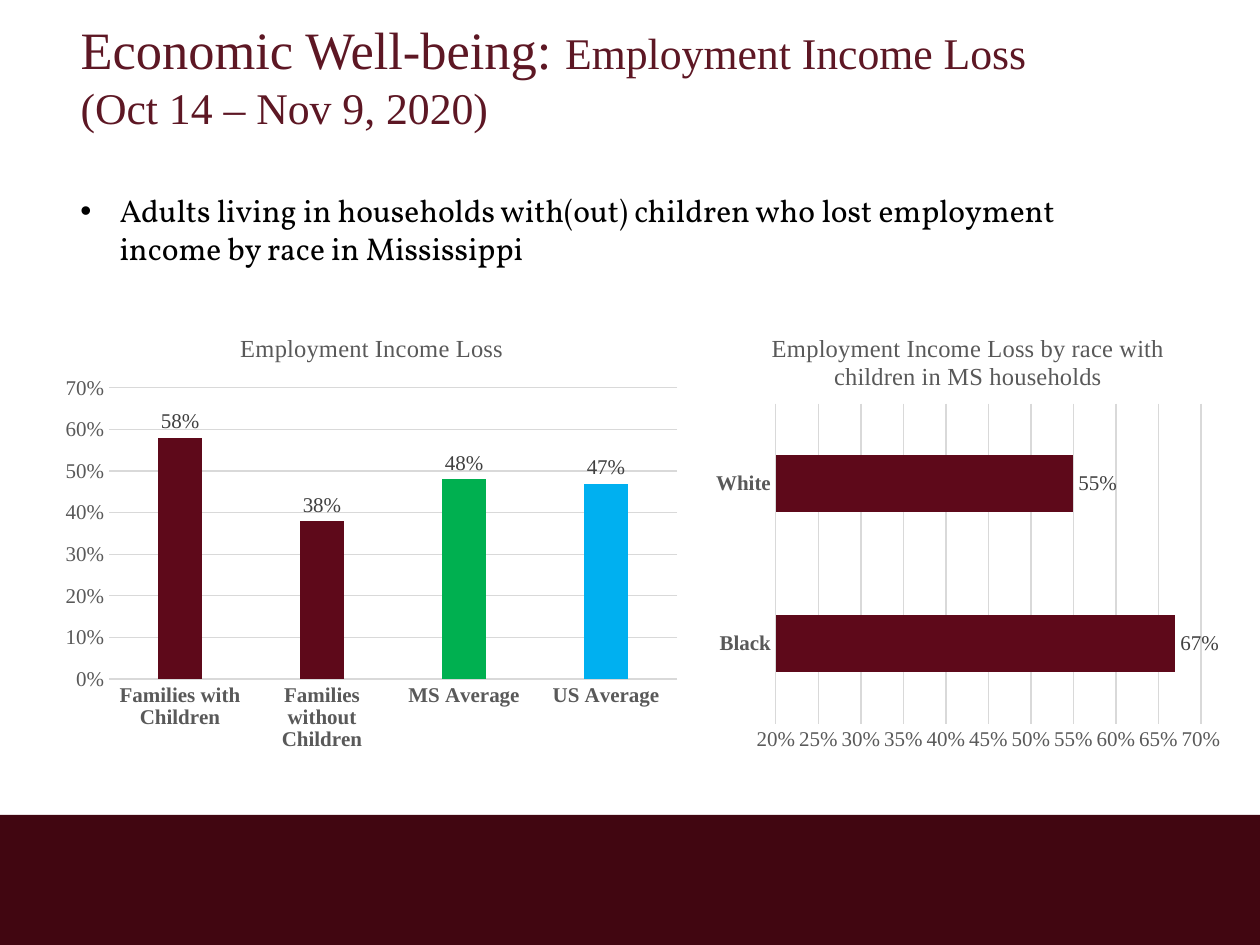
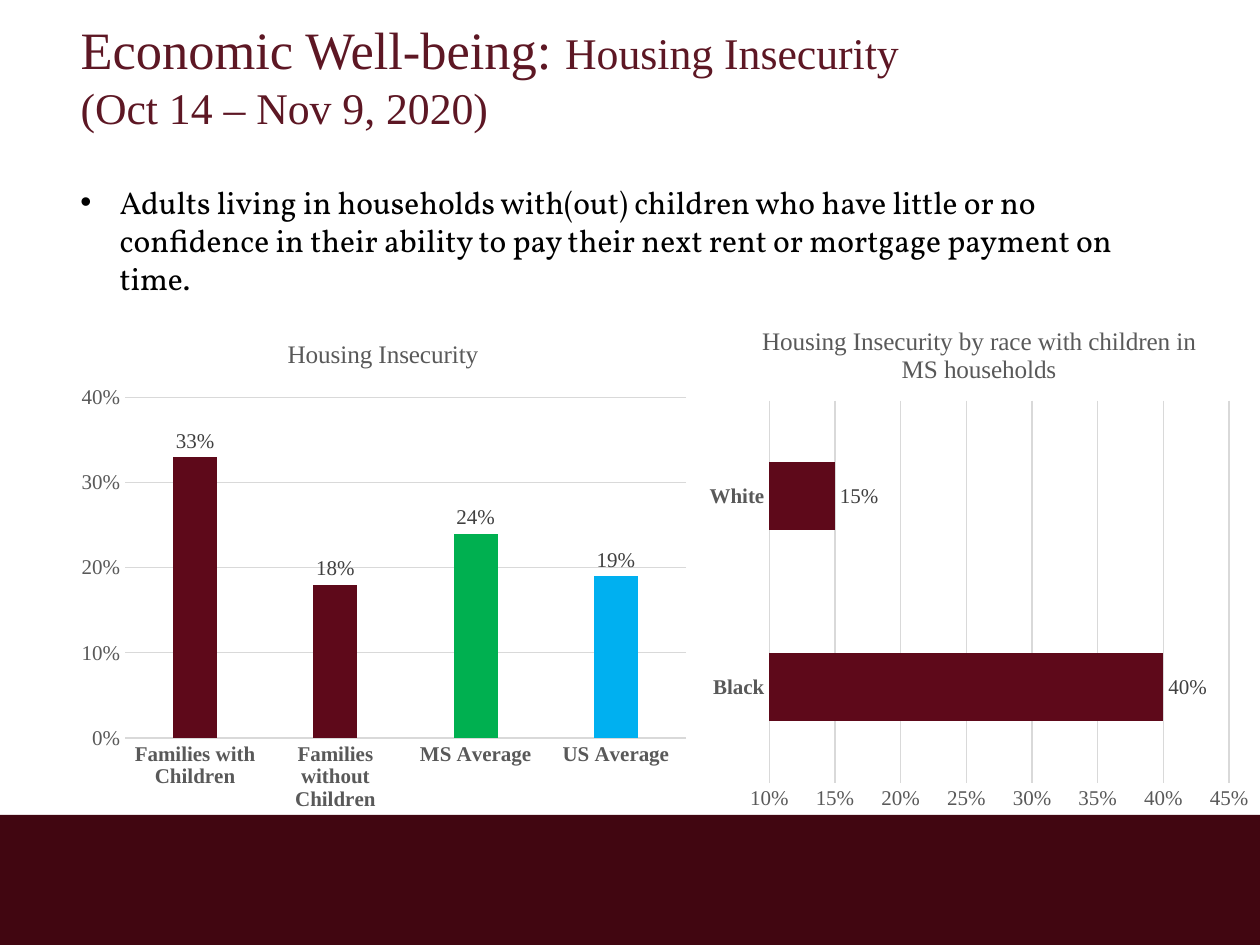
from dataclasses import dataclass, field

from lxml import etree
from pptx import Presentation
from pptx.chart.data import CategoryChartData
from pptx.dml.color import RGBColor
from pptx.enum.chart import XL_CHART_TYPE, XL_LABEL_POSITION, XL_TICK_MARK
from pptx.enum.shapes import MSO_SHAPE
from pptx.enum.text import MSO_ANCHOR, MSO_AUTO_SIZE, PP_ALIGN
from pptx.oxml import parse_xml
from pptx.oxml.ns import nsdecls, qn
from pptx.util import Cm, Pt

HUES = {
    "white": "FFFFFF", "black": "000000", "title": "5D1724", "band": "410611",
    "bar": "5E091A", "state": "00B050", "nation": "00B0F0",
    "axis": "595959", "label": "404040", "grid": "D9D9D9",
}
SERIF, BODY = "Times New Roman", "Vollkorn"
WIDTH, HEIGHT = 25.4, 19.05
BAND_TOP = 16.43
GROUPS = ("Families with Children", "Families without Children",
          "MS Average", "US Average")
RACES = ("Black", "White")


@dataclass
class Box:
    left: float
    top: float
    width: float
    height: float

    def lengths(self) -> tuple:
        return Cm(self.left), Cm(self.top), Cm(self.width), Cm(self.height)


@dataclass
class Graph:
    """A chart; frame and plot are both measured in cm on the slide."""
    title: str
    frame: Box
    plot: Box
    cats: tuple
    vals: tuple
    low: float
    high: float
    step: float
    size: float = 14
    name: str = "Series 1"
    flat: bool = False
    points: dict = field(default_factory=dict)


@dataclass
class Page:
    topic: str
    note: str
    area: Box
    graphs: tuple


AVERAGES = {2: "state", 3: "nation"}
PAGES = (
    Page(
        "Employment Income Loss",
        "Adults living in households with(out) children who lost employment "
        "income by race in Mississippi",
        Box(1.37, 3.73, 21.06, 2.57),
        (
            Graph("Employment Income Loss",
                  Box(1.07, 6.3, 12.85, 9.02), Box(2.2, 7.82, 11.45, 5.87),
                  GROUPS, (0.58, 0.38, 0.48, 0.47), 0, 0.7, 0.1,
                  points=AVERAGES),
            Graph("Employment Income Loss by race with children in MS households",
                  Box(14.22, 6.3, 10.59, 9.02), Box(15.64, 8.14, 8.57, 6.45),
                  RACES, (0.67, 0.55), 0.2, 0.7, 0.05, flat=True),
        ),
    ),
    Page(
        "Housing Insecurity",
        "Adults living in households with(out) children who have little or no "
        "confidence in their ability to pay their next rent or mortgage "
        "payment on time.",
        Box(1.37, 3.56, 21.69, 2.57),
        (
            Graph("Housing Insecurity",
                  Box(1.37, 6.38, 12.7, 10.16), Box(2.52, 8.01, 11.31, 6.87),
                  GROUPS, (0.33, 0.18, 0.24, 0.19), 0, 0.4, 0.1, size=14.4,
                  name="Housing Insecurity", points=AVERAGES),
            Graph("Housing Insecurity by race with children in MS households",
                  Box(14.07, 6.12, 11.33, 10.44), Box(15.51, 8.08, 9.27, 7.7),
                  RACES, (0.4, 0.15), 0.1, 0.45, 0.05, size=14.4, flat=True),
        ),
    ),
)


def hue(key: str) -> RGBColor:
    return RGBColor.from_string(HUES[key])


def style(font, size: float, color: str, face: str = SERIF,
          bold: bool = False) -> None:
    font.size, font.name, font.bold = Pt(size), face, bold
    font.color.rgb = hue(color)


def write(para, text: str, **form) -> None:
    run = para.add_run()
    run.text = text
    style(run.font, **form)


def paint(fill, key: str) -> None:
    fill.solid()
    fill.fore_color.rgb = hue(key)


def add_band(slide) -> None:
    box = Box(0, BAND_TOP, WIDTH, HEIGHT - BAND_TOP)
    band = slide.shapes.add_shape(MSO_SHAPE.RECTANGLE, *box.lengths())
    band.shadow.inherit = False
    paint(band.fill, "band")
    band.line.fill.background()


def add_title(slide, topic: str) -> None:
    title = slide.shapes.title
    title.left, title.top, title.width, title.height = Box(
        1.37, 0.1, 21.69, 3.18).lengths()
    frame = title.text_frame
    frame.auto_size = MSO_AUTO_SIZE.NONE
    frame.vertical_anchor = MSO_ANCHOR.TOP
    frame.margin_top = Cm(0.25)
    first, second = frame.paragraphs[0], frame.add_paragraph()
    first.alignment = second.alignment = PP_ALIGN.LEFT
    write(first, "Economic Well-being: ", size=30, color="title")
    write(first, topic, size=25, color="title")
    write(second, "(Oct 14 – Nov 9, 2020)", size=25, color="title")


def add_note(slide, page: Page) -> None:
    frame = slide.shapes.add_textbox(*page.area.lengths()).text_frame
    frame.word_wrap = True
    frame.auto_size = MSO_AUTO_SIZE.SHAPE_TO_FIT_TEXT
    para = frame.paragraphs[0]
    props = para._p.get_or_add_pPr()
    props.set("marL", str(Cm(0.79)))
    props.set("indent", str(-Cm(0.79)))
    etree.SubElement(props, qn("a:buFont")).set("typeface", "Arial")
    etree.SubElement(props, qn("a:buChar")).set("char", "•")
    para.line_spacing = Pt(21.7)
    write(para, page.note, size=18, color="black", face=BODY)


def place_plot(chart, graph: Graph) -> None:
    """Pin the inner plot area as fractions of the chart frame."""
    frame, plot = graph.frame, graph.plot
    parts = {
        "x": (plot.left - frame.left) / frame.width,
        "y": (plot.top - frame.top) / frame.height,
        "w": plot.width / frame.width,
        "h": plot.height / frame.height,
    }
    modes = "".join(f'<c:{key}Mode val="edge"/>' for key in "xy")
    sizes = "".join(f'<c:{key} val="{part:.4f}"/>' for key, part in parts.items())
    layout = parse_xml(
        f'<c:layout {nsdecls("c")}><c:manualLayout><c:layoutTarget val="inner"/>'
        f"{modes}{sizes}</c:manualLayout></c:layout>")
    area = chart._chartSpace.chart.plotArea
    for old in area.findall(qn("c:layout")):
        area.remove(old)
    area.insert(0, layout)


def format_axes(chart, graph: Graph) -> None:
    cats, vals = chart.category_axis, chart.value_axis
    for axis in (cats, vals):
        axis.major_tick_mark = axis.minor_tick_mark = XL_TICK_MARK.NONE
        style(axis.tick_labels.font, 12, "axis", bold=axis is cats)
    cats.has_major_gridlines = False
    vals.has_major_gridlines = True
    for line in (cats.format.line, vals.major_gridlines.format.line):
        line.color.rgb = hue("grid")
        line.width = Pt(0.75)
    vals.format.line.fill.background()
    vals.minimum_scale, vals.maximum_scale = graph.low, graph.high
    vals.major_unit = graph.step
    vals.tick_labels.number_format = "0%"
    vals.tick_labels.number_format_is_linked = False


def format_bars(chart, graph: Graph) -> None:
    plot = chart.plots[0]
    plot.vary_by_categories = False
    plot.gap_width = 182 if graph.flat else 219
    plot.overlap = 0 if graph.flat else -27
    series = plot.series[0]
    series.invert_if_negative = False
    paint(series.format.fill, "bar")
    for index, key in graph.points.items():
        paint(series.points[index].format.fill, key)
    labels = series.data_labels
    labels.show_value = True
    labels.position = XL_LABEL_POSITION.OUTSIDE_END
    labels.number_format = "0%"
    labels.number_format_is_linked = False
    style(labels.font, 12, "label")


def add_graph(slide, graph: Graph) -> None:
    data = CategoryChartData(number_format="0%")
    data.categories = graph.cats
    data.add_series(graph.name, graph.vals)
    kind = (XL_CHART_TYPE.BAR_CLUSTERED if graph.flat
            else XL_CHART_TYPE.COLUMN_CLUSTERED)
    chart = slide.shapes.add_chart(kind, *graph.frame.lengths(), data).chart
    style(chart.font, 12, "black")
    chart.has_legend = False
    chart.has_title = True
    chart.chart_title.include_in_layout = False
    write(chart.chart_title.text_frame.paragraphs[0], graph.title,
          size=graph.size, color="axis")
    place_plot(chart, graph)
    format_axes(chart, graph)
    format_bars(chart, graph)


def main() -> None:
    deck = Presentation()
    deck.slide_width, deck.slide_height = Cm(WIDTH), Cm(HEIGHT)
    for page in PAGES:
        slide = deck.slides.add_slide(deck.slide_layouts[5])
        paint(slide.background.fill, "white")
        add_band(slide)
        add_title(slide, page.topic)
        add_note(slide, page)
        for graph in page.graphs:
            add_graph(slide, graph)
    deck.save("out.pptx")


if __name__ == "__main__":
    main()
